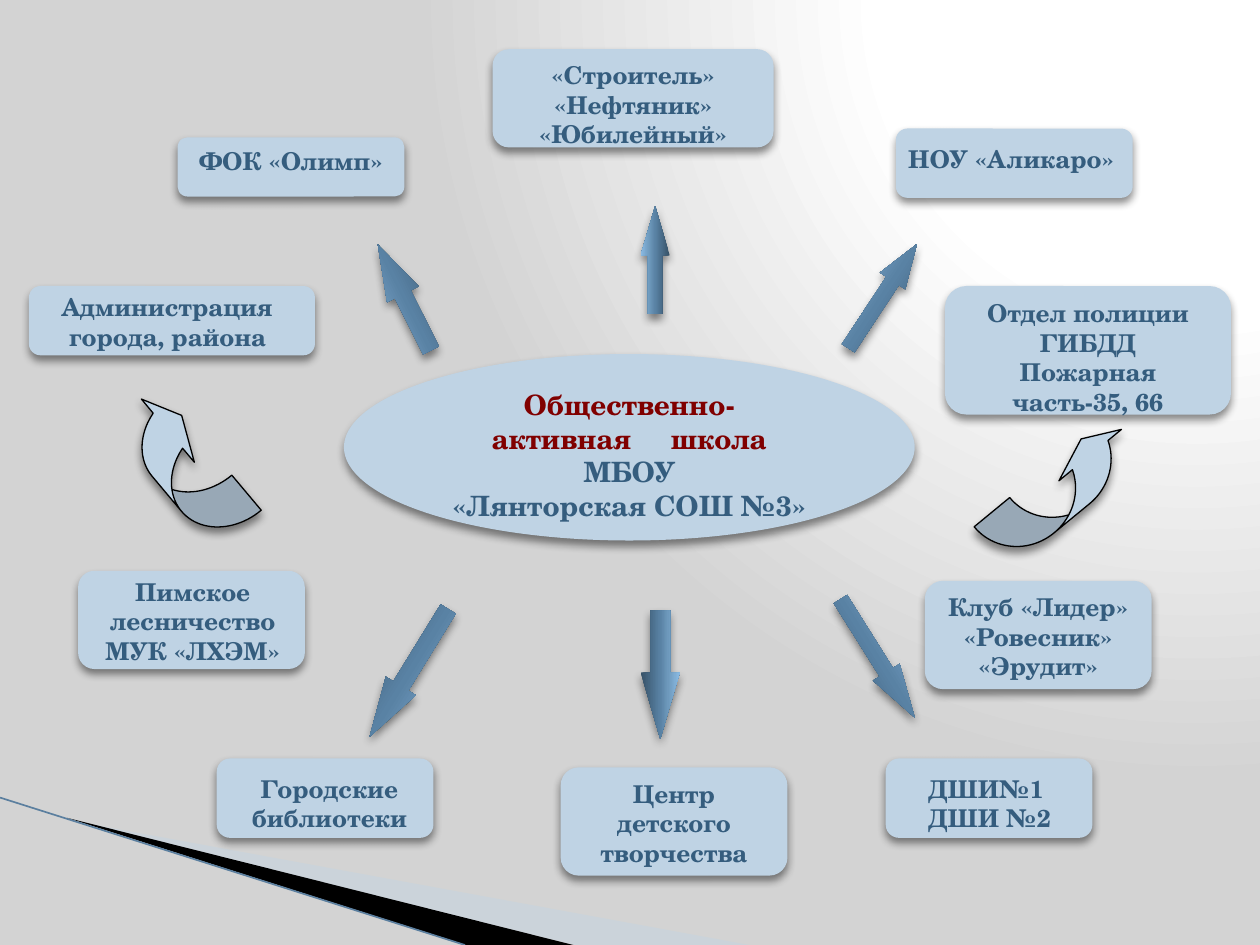
import pptx
import pptx.util
import pptx.oxml
import pptx.oxml.ns
import pptx.dml.color
import pptx.enum.shapes
import pptx.enum.text
from lxml import etree

Inches, Pt, qn = pptx.util.Inches, pptx.util.Pt, pptx.oxml.ns.qn
RGB = pptx.dml.color.RGBColor.from_string
SHAPE = pptx.enum.shapes.MSO_SHAPE
ALIGN = pptx.enum.text.PP_ALIGN
FONT = "TeX Gyre Schola"
COLORS = {"box": "BFD3E4", "text": "355D7E", "title": "800000", "black": "000000",
          "swoosh": "C0D3E6", "edge": "5B7F9F"}
BACKDROP = [(0, "FFFFFF"), (40, "FFFFFF"), (100, "D3D3D3")]
STEEL = [(0, "365167"), (50, "5982A4"), (70, "6E99BC"), (100, "8BBBE4")]

prs = pptx.Presentation()
prs.slide_width, prs.slide_height = Inches(10), Inches(7.5)
slide = prs.slides.add_slide(prs.slide_layouts[6])
shapes = slide.shapes


def set_gradient(owner, fill, stops, direction):
    fill.gradient()
    gradient = owner.element.find(".//" + qn("a:gradFill"))
    for child in list(gradient):
        gradient.remove(child)
    gradient.set("rotWithShape", "1")
    stop_list = etree.SubElement(gradient, qn("a:gsLst"))
    for place, color in stops:
        stop = etree.SubElement(stop_list, qn("a:gs"), pos=str(place * 1000))
        etree.SubElement(stop, qn("a:srgbClr"), val=color)
    gradient.append(pptx.oxml.parse_xml(direction))


def add_raised(kind, left, top, width, height):
    shape = shapes.add_shape(kind, Inches(left), Inches(top), Inches(width), Inches(height))
    shape.fill.solid()
    shape.fill.fore_color.rgb = RGB(COLORS["box"])
    shape.line.fill.background()
    shape.shadow.inherit = False
    effects = shape.element.spPr.find(qn("a:effectLst"))
    shadow = etree.SubElement(effects, qn("a:outerShdw"), blurRad=str(Pt(5)),
                              dist=str(Pt(3)), dir="5400000", rotWithShape="0")
    tint = etree.SubElement(shadow, qn("a:srgbClr"), val=COLORS["black"])
    etree.SubElement(tint, qn("a:alpha"), val="45000")
    shape.text_frame.word_wrap = True
    shape.text_frame.vertical_anchor = pptx.enum.text.MSO_ANCHOR.TOP
    return shape


# Background
NS = 'xmlns:a="http://schemas.openxmlformats.org/drawingml/2006/main"'
set_gradient(slide, slide.background.fill, BACKDROP,
             f'<a:path {NS} path="circle">'
             '<a:fillToRect l="95000" t="-106000" r="5000" b="206000"/></a:path>')

# Corner swoosh
for points, color, alpha in [
    ([(0.55, 6.51), (5.95, 7.5), (4.56, 7.5)], "swoosh", 40),
    ([(0.53, 6.49), (4.55, 7.5), (3.7, 7.5)], "black", 100),
]:
    corners = [(Inches(x), Inches(y)) for x, y in points]
    outline = shapes.build_freeform(*corners[0])
    outline.add_line_segments(corners[1:])
    wedge = outline.convert_to_shape()
    wedge.fill.solid()
    wedge.fill.fore_color.rgb = RGB(COLORS[color])
    wedge.line.fill.background()
    wedge.shadow.inherit = False
    tint = wedge.element.spPr.find(qn("a:solidFill"))[0]
    etree.SubElement(tint, qn("a:alpha"), val=str(alpha * 1000))

edge = shapes.add_connector(pptx.enum.shapes.MSO_CONNECTOR.STRAIGHT,
                            Inches(0), Inches(6.33), Inches(3.69), Inches(7.5))
edge.line.color.rgb = RGB(COLORS["edge"])
edge.line.width = Pt(0.95)
etree.SubElement(edge.element.spPr, qn("a:effectLst"))

# Partner boxes, the empty ones carry a separate label
for left, top, width, height, lines in [
    (3.91, 0.39, 2.23, 0.78, ["«Строитель»", "«Нефтяник»", "«Юбилейный»"]),
    (1.41, 1.09, 1.8, 0.47, ["ФОК «Олимп»"]),
    (4.45, 6.09, 1.8, 0.86, ["Центр детского творчества"]),
    (0.23, 2.27, 2.27, 0.55, []),
    (7.5, 2.27, 2.27, 1.02, ["Отдел полиции", "ГИБДД", "Пожарная часть-35, 66"]),
    (0.62, 4.53, 1.8, 0.78, []),
    (7.34, 4.61, 1.8, 0.86, ["Клуб «Лидер» «Ровесник»", "«Эрудит»"]),
    (1.72, 6.02, 1.72, 0.63, []),
    (7.11, 1.02, 1.88, 0.55, []),
    (7.03, 6.02, 1.64, 0.63, []),
]:
    partner = add_raised(SHAPE.ROUNDED_RECTANGLE, left, top, width, height)
    if lines:
        partner.text_frame.text = "\n".join(lines)
        for paragraph in partner.text_frame.paragraphs:
            paragraph.alignment = ALIGN.CENTER
            paragraph.font.name, paragraph.font.size = FONT, Pt(14)
            paragraph.font.bold = True
            paragraph.font.color.rgb = RGB(COLORS["text"])

# School in the centre
school = add_raised(SHAPE.OVAL, 2.73, 2.81, 4.53, 1.48)
school.text_frame.text = "Общественно-\nактивная\nМБОУ\n«Лянторская СОШ №3»"
lines = school.text_frame.paragraphs
gap = lines[1].add_run()
gap.text = " "
gap.font._element.set("spc", "1800")  # wide gap between the two words
lines[1].add_run().text = "школа"
for paragraph, color in zip(lines, ["title", "title", "text", "text"]):
    paragraph.alignment = ALIGN.CENTER
    paragraph.font.name, paragraph.font.size = FONT, Pt(16)
    paragraph.font.bold = True
    paragraph.font.color.rgb = RGB(COLORS[color])

# Straight arrows
for left, top, width, height, turn, head in [
    (2.74, 2.22, 0.94, 0.28, 243.3, 1.58),
    (6.51, 2.23, 0.99, 0.24, 303.4, 1.46),
    (4.77, 1.95, 0.86, 0.23, 270, 1.7),
    (2.65, 5.2, 1.19, 0.28, 121.6, 1.69),
    (4.73, 5.2, 1.02, 0.31, 90, 1.7),
    (6.41, 5.1, 1.11, 0.25, 57.9, 1.7),
]:
    arrow = add_raised(SHAPE.RIGHT_ARROW, left, top, width, height)
    arrow.rotation = turn
    arrow.adjustments[1] = head
    set_gradient(arrow, arrow.fill, STEEL, f'<a:lin {NS} ang="16200000" scaled="0"/>')

# Curved arrows
for left, top, width, height, turn, bends, mirrored in [
    (8.2, 3.19, 0.44, 1.42, 230.6, (0.83, 1.46, 0.33), False),
    (1.22, 3.05, 0.49, 1.31, 140, (0.74, 1.47, 0.33), True),
]:
    curve = add_raised(SHAPE.CURVED_RIGHT_ARROW, left, top, width, height)
    curve.rotation = turn
    for index, bend in enumerate(bends):
        curve.adjustments[index] = bend
    curve.line.color.rgb = RGB(COLORS["black"])
    curve.line.width = Pt(0.75)
    if mirrored:
        curve.element.spPr.find(qn("a:xfrm")).set("flipH", "1")

# Labels laid over the empty boxes
for left, top, width, height, align, lines in [
    (0.39, 2.27, 1.91, 0.57, ALIGN.LEFT, ["Администрация", "города, района"]),
    (7.27, 6.09, 1.22, 0.57, ALIGN.LEFT, ["ДШИ№1", "ДШИ №2"]),
    (7.11, 1.09, 1.92, 0.34, ALIGN.LEFT, ["НОУ «Аликаро»"]),
    (1.88, 6.09, 1.47, 0.57, ALIGN.CENTER, ["Городские", "библиотеки"]),
    (0.7, 4.53, 1.66, 0.81, ALIGN.CENTER, ["Пимское", "лесничество", "МУК «ЛХЭМ»"]),
]:
    label = shapes.add_textbox(Inches(left), Inches(top), Inches(width), Inches(height))
    label.text_frame.word_wrap = False
    label.text_frame.text = "\n".join(lines)
    for paragraph in label.text_frame.paragraphs:
        paragraph.alignment = align
        paragraph.font.name, paragraph.font.size = FONT, Pt(14)
        paragraph.font.bold = True
        paragraph.font.color.rgb = RGB(COLORS["text"])
        if paragraph.text.startswith("города"):
            paragraph._p.get_or_add_pPr().set("marL", str(Inches(0.06)))

prs.save("out.pptx")
